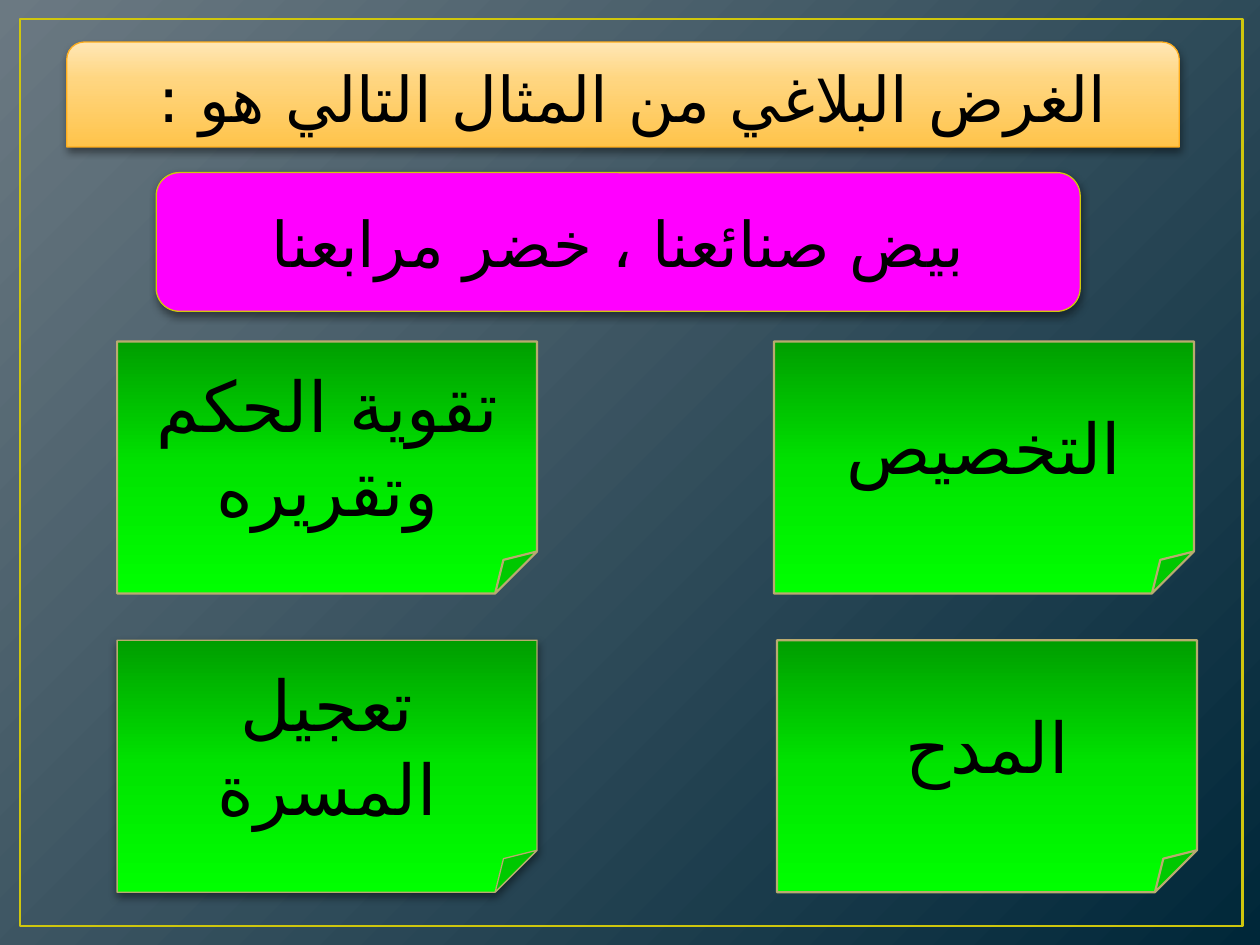
"""Build an Arabic rhetoric quiz slide with a question, an example and four answer cards."""
from dataclasses import dataclass

from lxml import etree
from pptx import Presentation
from pptx.dml.color import RGBColor
from pptx.dml.fill import FillFormat
from pptx.enum.shapes import MSO_SHAPE
from pptx.enum.text import MSO_ANCHOR, PP_ALIGN
from pptx.oxml.ns import qn
from pptx.shapes.autoshape import Shape
from pptx.slide import Slide
from pptx.text.text import TextFrame
from pptx.util import Inches, Pt

RECTANGLE = MSO_SHAPE.RECTANGLE
ROUNDED = MSO_SHAPE.ROUNDED_RECTANGLE
ROUND_TOP = MSO_SHAPE.ROUND_2_SAME_RECTANGLE
FOLDED = MSO_SHAPE.FOLDED_CORNER
CENTER = PP_ALIGN.CENTER
MIDDLE = MSO_ANCHOR.MIDDLE

FONT = "TeX Gyre Schola"
ARABIC_FONT = "DejaVu Sans"
BLACK = RGBColor(0x00, 0x00, 0x00)
GOLD = RGBColor(0xCF, 0xC6, 0x0D)
ORANGE = RGBColor(0xFF, 0xAD, 0x1C)
MAGENTA = RGBColor(0xFF, 0x00, 0xFF)
TAN = RGBColor(0xB9, 0xAB, 0x6F)
SLATE = RGBColor(0x6B, 0x79, 0x82)
NAVY = RGBColor(0x00, 0x27, 0x39)
PALE_AMBER = RGBColor(0xFF, 0xE7, 0xB6)
LIGHT_AMBER = RGBColor(0xFF, 0xD6, 0x81)
AMBER = RGBColor(0xFF, 0xC4, 0x4B)
DARK_GREEN = RGBColor(0x00, 0x9E, 0x00)
MID_GREEN = RGBColor(0x00, 0xE4, 0x00)
GREEN = RGBColor(0x00, 0xFF, 0x00)

Stops = tuple[tuple[int, RGBColor], ...]
PAGE_STOPS: Stops = ((0, SLATE), (100, NAVY))
TITLE_STOPS: Stops = ((0, PALE_AMBER), (35, LIGHT_AMBER), (100, AMBER))
CARD_STOPS: Stops = ((0, DARK_GREEN), (50, MID_GREEN), (100, GREEN))

SLIDE_WIDTH, SLIDE_HEIGHT = Inches(10), Inches(7.5)
CARD_WIDTH, CARD_HEIGHT = 33.33, 26.67
LEFT_COLUMN, RIGHT_COLUMN = 9.3, 61.43
UPPER_ROW, LOWER_ROW = 36.13, 67.75


@dataclass(frozen=True)
class Panel:
    """A bordered panel placed in percent of the slide's size."""

    kind: MSO_SHAPE
    left: float
    top: float
    width: float
    height: float
    border: RGBColor
    border_width: float
    fill: RGBColor | Stops | None = None
    lines: tuple[str, ...] = ()
    size: int = 36
    shadow: bool = False


def card(left: float, top: float, *lines: str, border_width: float = 1.25,
         shadow: bool = False) -> Panel:
    """Describe one green answer card."""
    return Panel(FOLDED, left, top, CARD_WIDTH, CARD_HEIGHT, TAN, border_width,
                 CARD_STOPS, lines, 40, shadow)


PANELS = (
    Panel(RECTANGLE, 1.6, 2, 97, 96, GOLD, 1.5),
    Panel(ROUND_TOP, 5.3, 4.45, 88.3, 11.11, ORANGE, 0.75, TITLE_STOPS,
          ("الغرض البلاغي من المثال التالي هو : ",), shadow=True),
    Panel(ROUNDED, 12.4, 18.27, 73.33, 14.67, GOLD, 0.75, MAGENTA,
          ("بيض صنائعنا ، خضر مرابعنا",), shadow=True),
    card(LEFT_COLUMN, LOWER_ROW, "تعجيل المسرة", border_width=0.75, shadow=True),
    card(LEFT_COLUMN, UPPER_ROW, "تقوية الحكم", "وتقريره"),
    card(RIGHT_COLUMN + 0.24, LOWER_ROW, "المدح"),
    card(RIGHT_COLUMN, UPPER_ROW, "التخصيص"),
)


def add_color(parent: etree.ElementBase, color: RGBColor) -> etree.ElementBase:
    """Append an RGB colour element."""
    return etree.SubElement(parent, qn("a:srgbClr"), val=str(color))


def set_gradient(fill: FillFormat, owner: etree.ElementBase, stops: Stops, angle: int) -> None:
    """Fill with a linear gradient; the angle runs counter-clockwise."""
    fill.gradient()
    fill.gradient_angle = angle
    stop_list = next(owner.iter(qn("a:gsLst")))
    for old_stop in list(stop_list):
        stop_list.remove(old_stop)
    for position, color in stops:
        stop = etree.SubElement(stop_list, qn("a:gs"), pos=str(position * 1000))
        add_color(stop, color)


def add_shadow(shape: Shape) -> None:
    """Cast a soft shadow straight down."""
    effects = next(shape._element.iter(qn("a:effectLst")))
    shadow = etree.SubElement(effects, qn("a:outerShdw"), blurRad=str(Pt(5)),
                              dist=str(Pt(2)), dir="5400000", rotWithShape="0")
    etree.SubElement(add_color(shadow, BLACK), qn("a:alpha"), val="43000")


def write_text(frame: TextFrame, lines: tuple[str, ...], *, size: int,
               color: RGBColor = BLACK, font: str = FONT,
               arabic_font: str = ARABIC_FONT) -> None:
    """Write centred right-to-left paragraphs."""
    frame.word_wrap = True
    frame.vertical_anchor = MIDDLE
    for index, line in enumerate(lines):
        para = frame.add_paragraph() if index else frame.paragraphs[0]
        para.alignment = CENTER
        para._p.get_or_add_pPr().set("rtl", "1")
        span = para.add_run()
        span.text = line
        span.font.size = Pt(size)
        span.font.color.rgb = color
        span.font.name = font
        etree.SubElement(span._r.get_or_add_rPr(), qn("a:cs"), typeface=arabic_font)


def draw_panel(page: Slide, panel: Panel) -> None:
    """Draw one panel with its fill, border, shadow and text."""
    box = page.shapes.add_shape(
        panel.kind,
        round(SLIDE_WIDTH * panel.left / 100), round(SLIDE_HEIGHT * panel.top / 100),
        round(SLIDE_WIDTH * panel.width / 100), round(SLIDE_HEIGHT * panel.height / 100))
    if panel.fill is None:
        box.fill.background()
    elif isinstance(panel.fill, RGBColor):
        box.fill.solid()
        box.fill.fore_color.rgb = panel.fill
    else:
        set_gradient(box.fill, box._element, panel.fill, 270)
    box.line.color.rgb = panel.border
    box.line.width = Pt(panel.border_width)
    box.shadow.inherit = False
    if panel.shadow:
        add_shadow(box)
    write_text(box.text_frame, panel.lines, size=panel.size)


def main() -> None:
    """Build and save the deck."""
    deck = Presentation()
    deck.slide_width, deck.slide_height = SLIDE_WIDTH, SLIDE_HEIGHT
    page = deck.slides.add_slide(deck.slide_layouts[6])
    set_gradient(page.background.fill, page._element, PAGE_STOPS, 315)
    for panel in PANELS:
        draw_panel(page, panel)
    deck.save("out.pptx")


if __name__ == "__main__":
    main()
